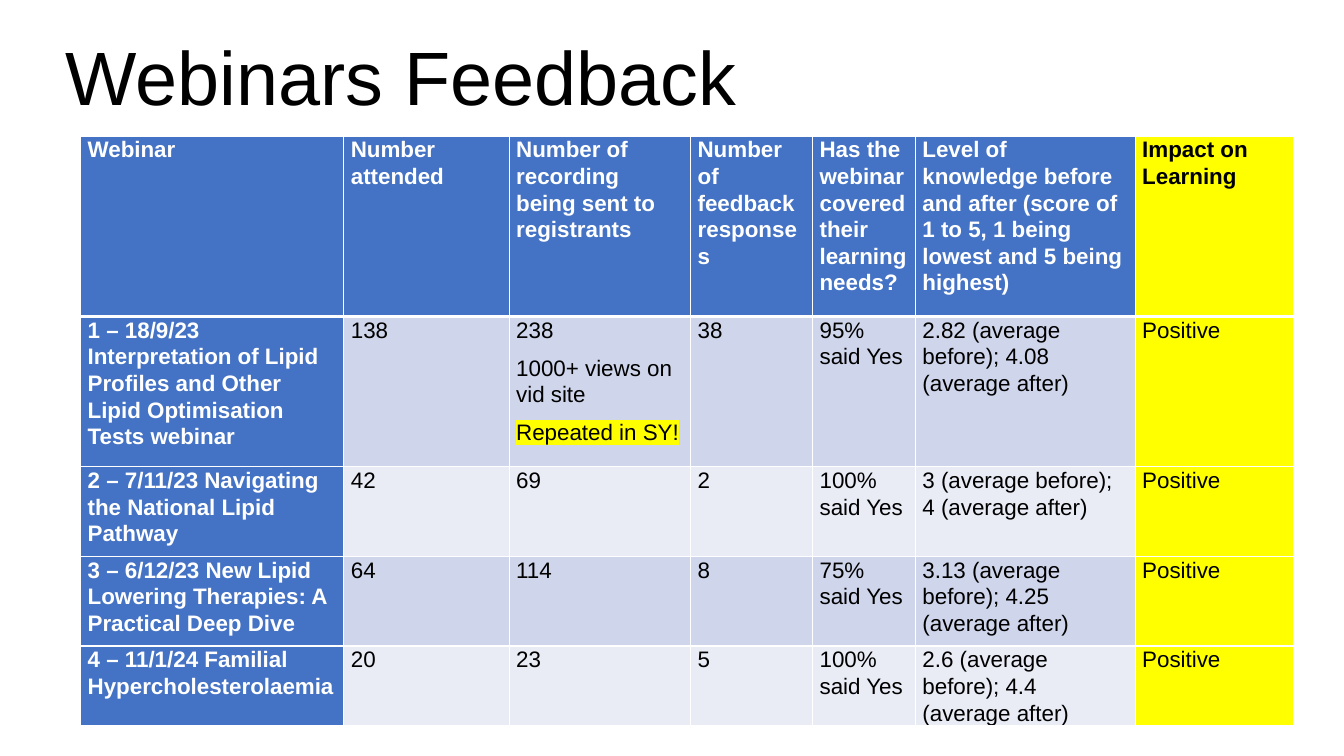
import dataclasses

import lxml.etree
import pptx
import pptx.dml.color
import pptx.enum.text
import pptx.oxml.ns
import pptx.util

Inches = pptx.util.Inches
Pt = pptx.util.Pt
qn = pptx.oxml.ns.qn

FONT = "Arial"
WHITE, BLACK, BLUE, YELLOW = "FFFFFF", "000000", "4472C4", "FFFF00"
BANDS = ["CFD5EA", "E9EBF5"]
HIGHLIGHTED = "Repeated in SY!"


@dataclasses.dataclass
class Column:
    heading: str
    width: float


@dataclasses.dataclass
class Webinar:
    name: str
    attended: str
    recordings: list[str]
    responses: str
    covered: str
    knowledge: str
    height: float
    impact: str = "Positive"

    def entries(self) -> list[list[str]]:
        return [[self.name], [self.attended], self.recordings, [self.responses],
                [self.covered], [self.knowledge], [self.impact]]


@dataclasses.dataclass
class CellStyle:
    fill: str
    colour: str
    bold: bool


HEADER_HEIGHT = 1.79
COLUMNS = [
    Column("Webinar", 2.61),
    Column("Number attended", 1.64),
    Column("Number of recording being sent to registrants", 1.8),
    Column("Number of feedback responses", 1.21),
    Column("Has the webinar covered their learning needs?", 1.02),
    Column("Level of knowledge before and after (score of 1 to 5, "
           "1 being lowest and 5 being highest)", 2.18),
    Column("Impact on Learning", 1.57),
]
WEBINARS = [
    Webinar("1 – 18/9/23 Interpretation of Lipid Profiles and Other Lipid "
            "Optimisation Tests webinar", "138",
            ["238", "1000+ views on vid site", HIGHLIGHTED], "38",
            "95% said Yes", "2.82 (average before); 4.08 (average after)", 1.49),
    Webinar("2 – 7/11/23 Navigating the National Lipid Pathway", "42", ["69"], "2",
            "100% said Yes", "3 (average before); 4 (average after)", 0.89),
    Webinar("3 – 6/12/23 New Lipid Lowering Therapies: A Practical Deep Dive",
            "64", ["114"], "8", "75% said Yes",
            "3.13 (average before); 4.25 (average after)", 0.89),
    Webinar("4 – 11/1/24 Familial Hypercholesterolaemia", "20", ["23"], "5",
            "100% said Yes", "2.6 (average before); 4.4 (average after)", 0.59),
]


def colour_of(value: str) -> pptx.dml.color.RGBColor:
    return pptx.dml.color.RGBColor.from_string(value)


def add_span(para, text: str, size: float, colour: str, bold: bool = False):
    span = para.add_run()
    span.text = text
    span.font.name = FONT
    span.font.size = Pt(size)
    span.font.bold = bold
    span.font.color.rgb = colour_of(colour)
    return span


def highlight(span, colour: str) -> None:
    mark = lxml.etree.Element(qn("a:highlight"))
    lxml.etree.SubElement(mark, qn("a:srgbClr"), val=colour)
    span.font._element.find(qn("a:solidFill")).addnext(mark)


def add_borders(cell, top: float, bottom: float) -> None:
    properties = cell._tc.get_or_add_tcPr()
    for side, width in [("L", 1), ("R", 1), ("T", top), ("B", bottom)]:
        line = lxml.etree.SubElement(properties, qn(f"a:ln{side}"), w=str(Pt(width)))
        fill = lxml.etree.SubElement(line, qn("a:solidFill"))
        lxml.etree.SubElement(fill, qn("a:srgbClr"), val=WHITE)


def style_for(row: int, column: int) -> CellStyle:
    if column == len(COLUMNS) - 1:
        return CellStyle(YELLOW, BLACK, row == 0)
    if row == 0 or column == 0:
        return CellStyle(BLUE, WHITE, True)
    return CellStyle(BANDS[(row - 1) % 2], BLACK, False)


def fill_cell(cell, texts: list[str], row: int, column: int) -> None:
    style = style_for(row, column)
    add_borders(cell, 3 if row == 1 else 1, 3 if row == 0 else 1)
    cell.fill.solid()
    cell.fill.fore_color.rgb = colour_of(style.fill)
    cell.margin_left = cell.margin_right = Inches(0.07)
    cell.margin_top = cell.margin_bottom = Inches(0)
    for index, text in enumerate(texts):
        frame = cell.text_frame
        para = frame.add_paragraph() if index else frame.paragraphs[0]
        para.line_spacing = 1.07
        para.space_after = Pt(8)
        span = add_span(para, text, 16, style.colour, style.bold)
        if text == HIGHLIGHTED:
            highlight(span, YELLOW)


def add_title(page, text: str) -> None:
    box = page.shapes.title
    box.left, box.top = Inches(-0.57), Inches(0.65)
    box.width, box.height = Inches(9.1), Inches(0.61)
    frame = box.text_frame
    frame.auto_size = pptx.enum.text.MSO_AUTO_SIZE.NONE
    frame.vertical_anchor = pptx.enum.text.MSO_ANCHOR.BOTTOM
    para = frame.paragraphs[0]
    para.alignment = pptx.enum.text.PP_ALIGN.CENTER
    para.line_spacing = 0.9
    add_span(para, text, 54, BLACK)


def add_feedback_table(page) -> None:
    rows = [[[column.heading] for column in COLUMNS]]
    rows += [webinar.entries() for webinar in WEBINARS]
    heights = [HEADER_HEIGHT] + [webinar.height for webinar in WEBINARS]
    widths = [column.width for column in COLUMNS]
    table = page.shapes.add_table(
        len(rows), len(COLUMNS), Inches(0.8), Inches(1.35),
        Inches(sum(widths)), Inches(sum(heights))).table
    for column, width in zip(table.columns, widths):
        column.width = Inches(width)
    for row, height in zip(table.rows, heights):
        row.height = Inches(height)
    for row, entries in enumerate(rows):
        for column, texts in enumerate(entries):
            fill_cell(table.cell(row, column), texts, row, column)


def main() -> None:
    deck = pptx.Presentation()
    deck.slide_width, deck.slide_height = Inches(13.33), Inches(7.5)
    page = deck.slides.add_slide(deck.slide_layouts[0])
    subtitle = page.placeholders[1].element
    subtitle.getparent().remove(subtitle)
    add_title(page, "Webinars Feedback")
    add_feedback_table(page)
    deck.save("out.pptx")


if __name__ == "__main__":
    main()
